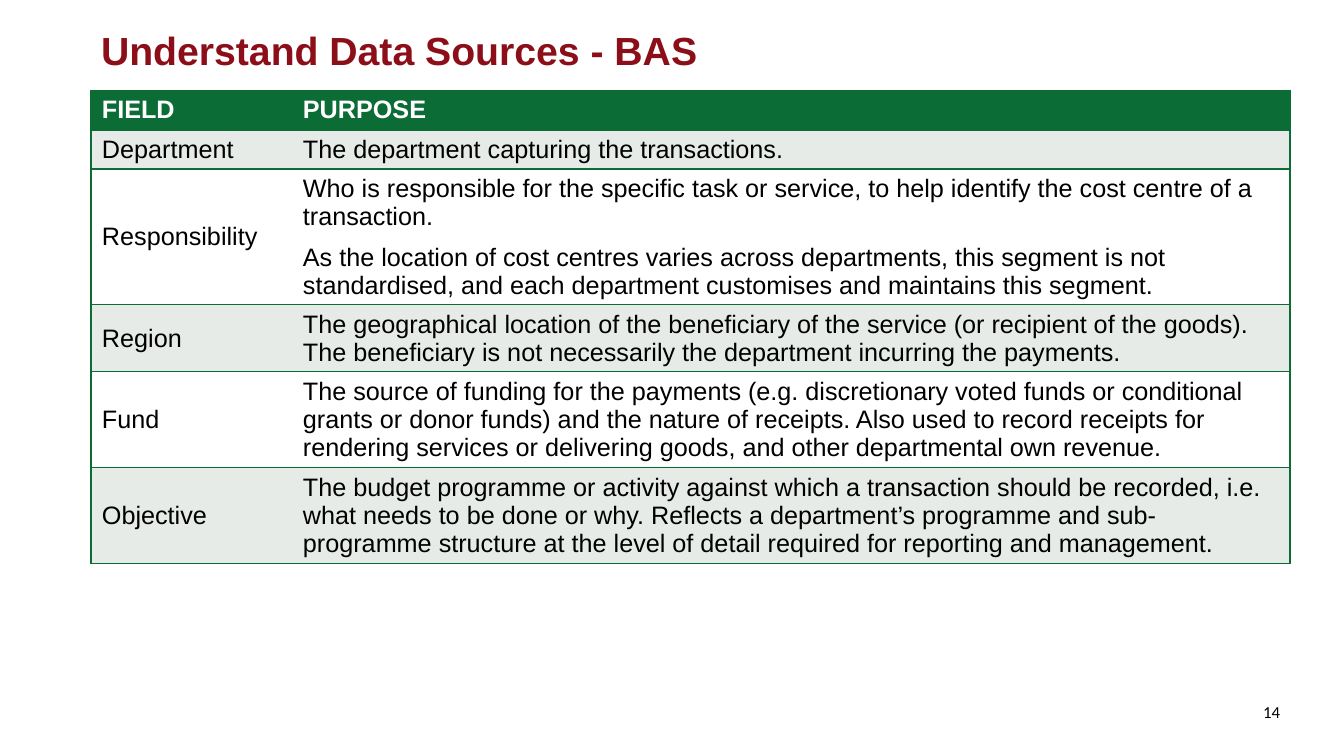
from lxml.etree import SubElement
from pptx import Presentation
from pptx.dml.color import RGBColor
from pptx.enum.text import MSO_ANCHOR, MSO_AUTO_SIZE, PP_ALIGN
from pptx.oxml.ns import qn
from pptx.util import Pt

PX = 914400 / 100.8
HUES = {"red": "8B0E18", "green": "0B6C36", "grey": "E7EBE8",
        "white": "FFFFFF", "black": "000000"}
HEAD = ("FIELD", "PURPOSE")
ROWS = [
    ("Department", "The department capturing the transactions."),
    ("Responsibility",
     "Who is responsible for the specific task or service, to help identify "
     "the cost centre of a transaction.\n"
     "As the location of cost centres varies across departments, this segment "
     "is not standardised, and each department customises and maintains this segment."),
    ("Region",
     "The geographical location of the beneficiary of the service (or recipient "
     "of the goods). The beneficiary is not necessarily the department incurring "
     "the payments."),
    ("Fund",
     "The source of funding for the payments (e.g. discretionary voted funds or "
     "conditional grants or donor funds) and the nature of receipts. Also used to "
     "record receipts for rendering services or delivering goods, and other "
     "departmental own revenue."),
    ("Objective",
     "The budget programme or activity against which a transaction should be "
     "recorded, i.e. what needs to be done or why. Reflects a department’s "
     "programme and sub-programme structure at the level of detail required for "
     "reporting and management."),
]
TALL = (39, 39, 136, 67, 96, 96)
WIDE = (201, 998)


def px(size):
    """Turn px into EMU."""
    return round(size * PX)


def hue(name):
    """Look up a colour."""
    return RGBColor.from_string(HUES[name])


def write(frame, text, size, tint, face="Arial", bold=False, align=PP_ALIGN.LEFT):
    """Fill a text frame and format its paragraphs."""
    frame.text = text
    frame.word_wrap = True
    for spot, para in enumerate(frame.paragraphs):
        para.alignment = align
        if spot:
            para.space_before = Pt(9)
        for run in para.runs:
            font = run.font
            font.name, font.size, font.bold = face, Pt(size), bold
            font.color.rgb = hue(tint)


def edge(cell, side, shown):
    """Draw or clear one side of a cell."""
    line = SubElement(cell._tc.get_or_add_tcPr(), qn(f"a:ln{side}"), w=str(Pt(1)))
    if shown:
        fill = SubElement(line, qn("a:solidFill"))
        SubElement(fill, qn("a:srgbClr"), val=HUES["green"])
    else:
        SubElement(line, qn("a:noFill"))


def title(slide, box):
    """Place the slide title."""
    shape = slide.shapes.title
    shape.left, shape.top, shape.width, shape.height = map(px, box)
    frame = shape.text_frame
    write(frame, "Understand Data Sources - BAS", 28, "red", bold=True)
    frame.auto_size = MSO_AUTO_SIZE.NONE
    frame.vertical_anchor = MSO_ANCHOR.MIDDLE


def table(slide, box):
    """Place the table of fields and purposes."""
    grid = slide.shapes.add_table(len(TALL), len(WIDE), *map(px, box)).table
    for col, wide in zip(grid.columns, WIDE):
        col.width = px(wide)
    for row, tall in zip(grid.rows, TALL):
        row.height = px(tall)
    for r, texts in enumerate([HEAD, *ROWS]):
        for c, text in enumerate(texts):
            cell = grid.cell(r, c)
            for side, shown in zip("LRTB", (c == 0, c == 1, True, True)):
                edge(cell, side, shown)
            cell.fill.solid()
            back = "green" if r == 0 else ("white", "grey")[r % 2]
            cell.fill.fore_color.rgb = hue(back)
            cell.margin_left = cell.margin_right = px(11)
            cell.margin_top = cell.margin_bottom = px(5)
            cell.vertical_anchor = MSO_ANCHOR.MIDDLE if r else MSO_ANCHOR.TOP
            write(cell.text_frame, text, 18, "black" if r else "white", bold=r == 0)


def number(slide, box):
    """Place the page number."""
    shape = slide.shapes.add_textbox(*map(px, box))
    write(shape.text_frame, "14", 12, "black", "Calibri", align=PP_ALIGN.RIGHT)


def main():
    """Build and save the slide."""
    deck = Presentation()
    deck.slide_width, deck.slide_height = px(1344), px(756)
    slide = deck.slides.add_slide(deck.slide_layouts[5])
    title(slide, (91, 27, 1160, 45))
    table(slide, (91, 91, sum(WIDE), sum(TALL)))
    number(slide, (1214, 697, 76, 39))
    deck.save("out.pptx")


if __name__ == "__main__":
    main()
